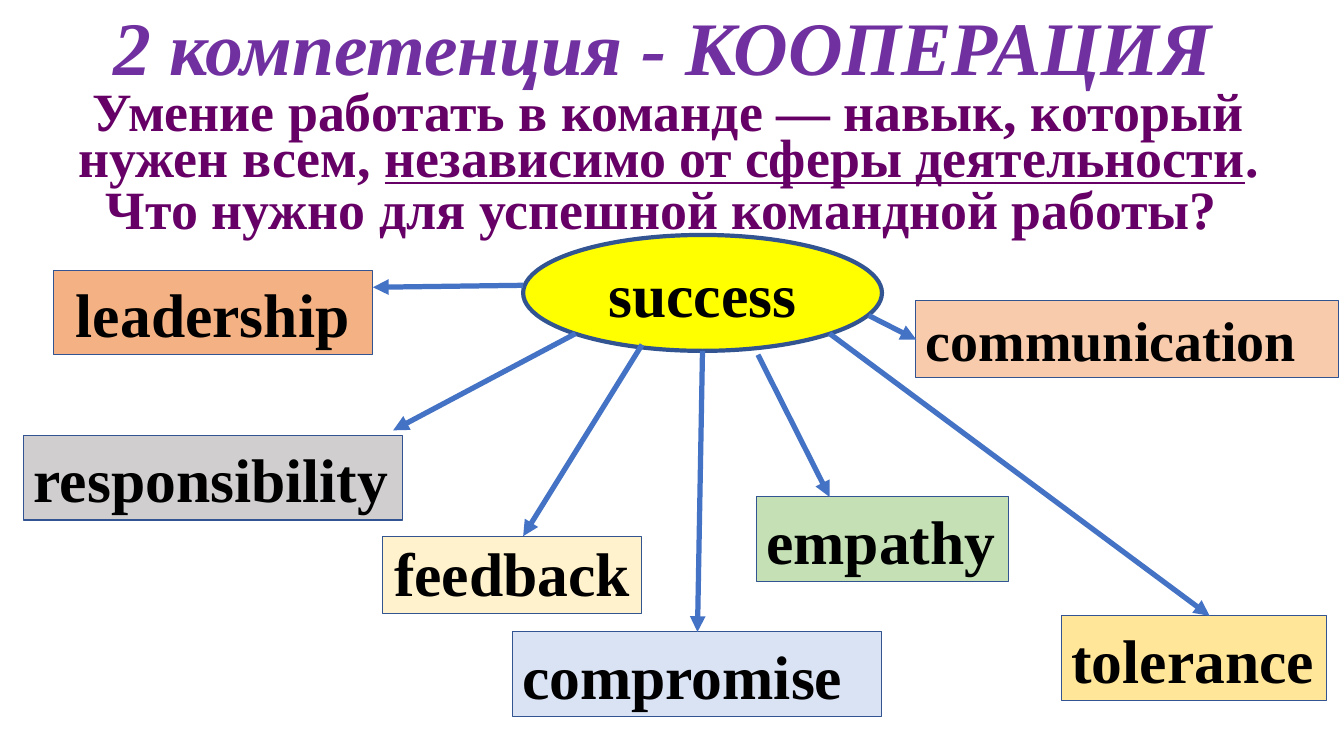
from lxml import etree
from pptx import Presentation
from pptx.dml.color import RGBColor
from pptx.enum.shapes import MSO_CONNECTOR, MSO_SHAPE
from pptx.enum.text import MSO_ANCHOR, PP_ALIGN
from pptx.oxml.ns import qn
from pptx.util import Pt

RECTANGLE, OVAL = MSO_SHAPE.RECTANGLE, MSO_SHAPE.OVAL
STRAIGHT = MSO_CONNECTOR.STRAIGHT
LEFT, CENTER = PP_ALIGN.LEFT, PP_ALIGN.CENTER
TOP, MIDDLE, BOTTOM = MSO_ANCHOR.TOP, MSO_ANCHOR.MIDDLE, MSO_ANCHOR.BOTTOM

FONT = "Times New Roman"
BLACK = RGBColor(0x00, 0x00, 0x00)
VIOLET = RGBColor(0x70, 0x30, 0xA0)
PLUM = RGBColor(0x66, 0x00, 0x66)
YELLOW = RGBColor(0xFF, 0xFF, 0x00)
OUTLINE = RGBColor(0x32, 0x54, 0x91)
ARROW = RGBColor(0x44, 0x72, 0xC4)
PALE_BLUE = RGBColor(0xDA, 0xE3, 0xF3)
PEACH = RGBColor(0xF8, 0xCB, 0xAD)
GOLD = RGBColor(0xFF, 0xE6, 0x99)
GREEN = RGBColor(0xC5, 0xE0, 0xB4)
GRAY = RGBColor(0xD0, 0xCE, 0xCE)
ORANGE = RGBColor(0xF4, 0xB1, 0x83)
CREAM = RGBColor(0xFF, 0xF2, 0xCC)

TITLE = "2 компетенция - КООПЕРАЦИЯ "
STATEMENT = [
    ("Умение работать в команде — навык, который нужен всем, ", False),
    ("независимо от сферы деятельности", True),
    (".", False),
]
QUESTION = [("Что нужно для успешной командной работы? ", False)]

SUCCESS_BOX = (373.7, 167.8, 256.3, 82.8)
SKILLS = [
    ("compromise", (365.8, 451.4, 264.2, 60.5), PALE_BLUE, 44, LEFT),
    ("communication", (654.2, 214.6, 301.7, 55.4), PEACH, 40, LEFT),
    ("tolerance", (758.2, 439.9, 189.4, 60.5), GOLD, 44, LEFT),
    ("empathy", (540.3, 355, 180, 60.5), GREEN, 44, LEFT),
    ("responsibility", (17, 311, 270.7, 60.5), GRAY, 44, LEFT),
    ("leadership", (38.2, 193, 227.8, 60.5), ORANGE, 44, CENTER),
    ("feedback", (273.4, 383, 185, 55.4), CREAM, 44, CENTER),
]
ARROWS = [
    ((373.7, 203.8), (266.4, 205.2)),
    ((411.1, 238.3), (280.8, 307.4)),
    ((541.4, 253.4), (592.6, 355)),
    ((620.6, 225.4), (654.5, 242.6)),
    ((458.6, 246.2), (373.7, 383)),
    ((501.8, 250.6), (498.2, 451.4)),
    ((592.6, 238.3), (864, 439.9)),
]


def write_text(shape, paragraphs, *, size, color=BLACK, italic=False,
               align=CENTER, anchor=TOP, spacing=1, gap=0):
    frame = shape.text_frame
    frame.word_wrap = True
    frame.vertical_anchor = anchor
    if align == LEFT:
        frame.margin_right = 0
    for index, runs in enumerate(paragraphs):
        paragraph = frame.paragraphs[0] if index == 0 else frame.add_paragraph()
        paragraph.alignment = align
        paragraph.line_spacing = spacing
        paragraph.space_before = Pt(gap if index else 0)
        for text, underline in runs:
            run = paragraph.add_run()
            run.text = text
            font = run.font
            font.name, font.size, font.bold = FONT, Pt(size), True
            font.italic, font.underline = italic, underline
            font.color.rgb = color


def add_box(slide, kind, box, fill, line_width):
    shape = slide.shapes.add_shape(kind, *map(Pt, box))
    shape.shadow.inherit = False
    shape.fill.solid()
    shape.fill.fore_color.rgb = fill
    shape.line.color.rgb = OUTLINE
    shape.line.width = Pt(line_width)
    return shape


def add_arrow(slide, start, end):
    connector = slide.shapes.add_connector(STRAIGHT, *map(Pt, start + end))
    connector.line.color.rgb = ARROW
    connector.line.width = Pt(3.75)
    properties = connector.element.spPr
    outline = properties.find(qn("a:ln"))
    etree.SubElement(outline, qn("a:tailEnd"), type="triangle")
    etree.SubElement(properties, qn("a:effectLst"))


def main():
    presentation = Presentation()
    presentation.slide_width = Pt(960)
    presentation.slide_height = Pt(540)
    slide = presentation.slides.add_slide(presentation.slide_layouts[6])

    title = slide.shapes.add_textbox(Pt(66), Pt(4), Pt(828), Pt(62))
    write_text(title, [[(TITLE, False)]], size=54, color=VIOLET, italic=True,
               spacing=0.9)

    body = slide.shapes.add_textbox(Pt(22.5), Pt(64.8), Pt(910), Pt(102))
    write_text(body, [STATEMENT, QUESTION], size=38.5, color=PLUM,
               spacing=0.7, gap=5)

    for name, box, fill, size, align in SKILLS:
        shape = add_box(slide, RECTANGLE, box, fill, 0.75)
        write_text(shape, [[(name, False)]], size=size, align=align, anchor=BOTTOM)

    success = add_box(slide, OVAL, SUCCESS_BOX, YELLOW, 3)
    write_text(success, [[("success", False)]], size=44, anchor=MIDDLE)

    for start, end in ARROWS:
        add_arrow(slide, start, end)

    presentation.save("out.pptx")


if __name__ == "__main__":
    main()
